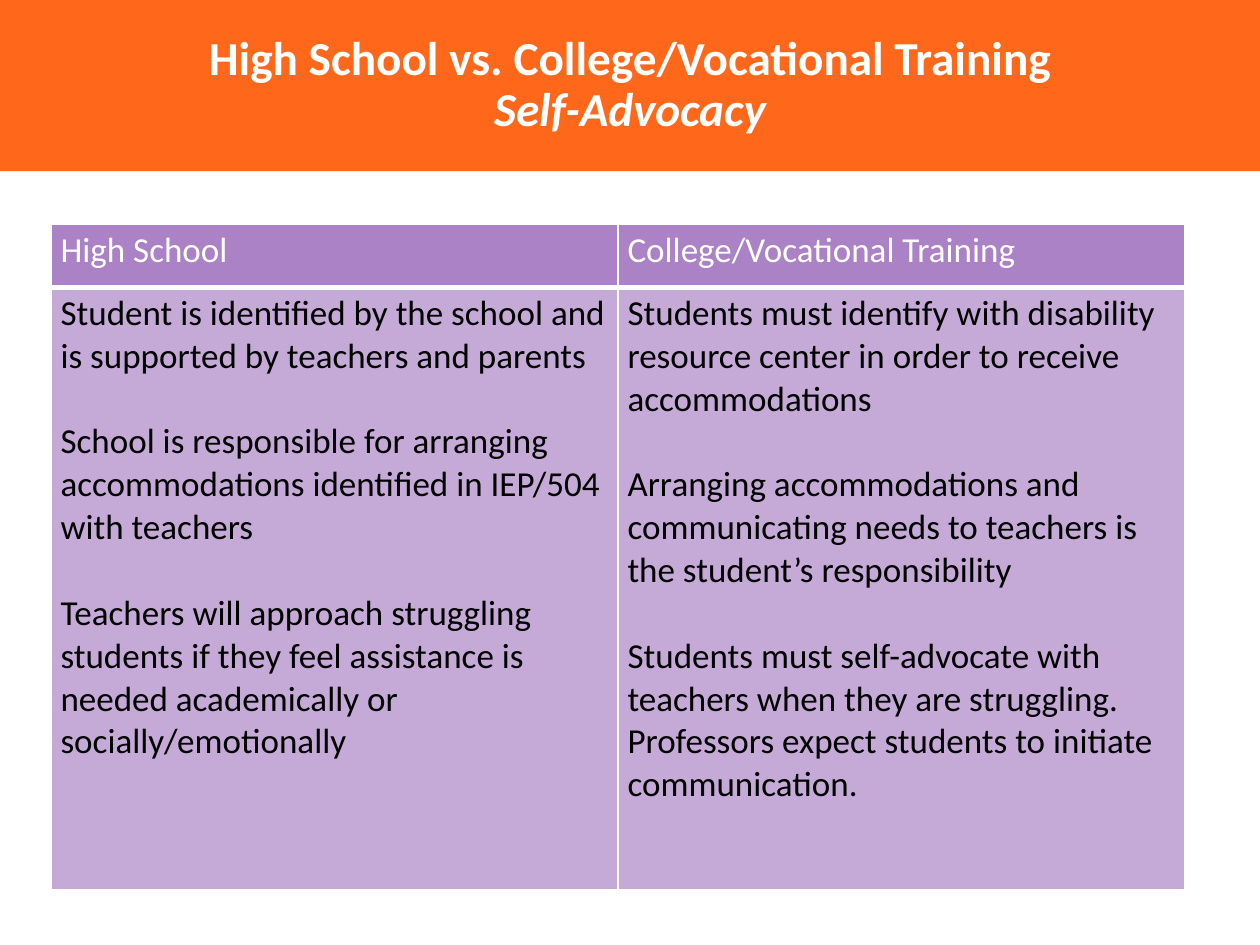
from pptx import Presentation
from pptx.dml.color import RGBColor
from pptx.enum.text import MSO_ANCHOR, MSO_AUTO_SIZE, PP_ALIGN
from pptx.oxml import parse_xml
from pptx.oxml.ns import nsdecls
from pptx.util import Cm, Pt

# Content
TOPIC = "High School vs. College/Vocational Training"
SUBTOPIC = "Self-Advocacy"
COMPARISON = {
    "High School": [
        "Student is identified by the school and is supported by teachers and parents",
        "School is responsible for arranging accommodations identified in IEP/504 with teachers",
        "Teachers will approach struggling students if they feel assistance is needed "
        "academically or socially/emotionally",
    ],
    "College/Vocational Training": [
        "Students must identify with disability resource center in order to receive accommodations",
        "Arranging accommodations and communicating needs to teachers is the student’s responsibility",
        "Students must self-advocate with teachers when they are struggling. "
        "Professors expect students to initiate communication.",
    ],
}

# Style
FONT = "Calibri"
ORANGE = RGBColor(0xFF, 0x67, 0x1B)
PURPLE = RGBColor(0xAB, 0x82, 0xC5)
LILAC = RGBColor(0xC5, 0xA9, 0xD7)
WHITE = RGBColor(0xFF, 0xFF, 0xFF)
BLACK = RGBColor(0, 0, 0)
POINT_GAP = Pt(24.4)  # one line of 20 pt text

# Layout
SLIDE_W, SLIDE_H = Cm(25.4), Cm(19.05)
BANNER_H = Cm(3.45)
TABLE_LEFT, TABLE_TOP, TABLE_W = Cm(1.03), Cm(4.52), Cm(22.86)
HEADING_H, POINTS_H = Cm(1.27), Cm(12.14)


def add_run(paragraph, text, size, color, bold=False, italic=False):
    run = paragraph.add_run()
    run.text = text
    font = run.font
    font.name, font.size, font.bold, font.italic = FONT, Pt(size), bold, italic
    font.color.rgb = color


def set_borders(cell, bottom_width):
    properties = cell._tc.get_or_add_tcPr()
    widths = {"lnL": 1, "lnR": 1, "lnT": 1, "lnB": bottom_width}
    for position, (side, width) in enumerate(widths.items()):
        properties.insert(position, parse_xml(
            f'<a:{side} {nsdecls("a")} w="{Pt(width)}"><a:solidFill>'
            f'<a:srgbClr val="{WHITE}"/></a:solidFill></a:{side}>'))


def fill_cell(cell, points, fill, color, bottom_width):
    cell.fill.solid()
    cell.fill.fore_color.rgb = fill
    set_borders(cell, bottom_width)
    cell.margin_left = cell.margin_right = Cm(0.19)
    cell.margin_top = cell.margin_bottom = Cm(0.1)
    frame = cell.text_frame
    for index, point in enumerate(points):
        paragraph = frame.add_paragraph() if index else frame.paragraphs[0]
        if index:
            paragraph.space_before = POINT_GAP
        add_run(paragraph, point, 20, color)


def main():
    prs = Presentation()
    prs.slide_width, prs.slide_height = SLIDE_W, SLIDE_H
    slide = prs.slides.add_slide(prs.slide_layouts[5])

    # Title banner
    banner = slide.shapes.title
    banner.left, banner.top, banner.width, banner.height = 0, 0, SLIDE_W, BANNER_H
    banner.fill.solid()
    banner.fill.fore_color.rgb = ORANGE
    banner.text_frame.auto_size = MSO_AUTO_SIZE.NONE
    banner.text_frame.vertical_anchor = MSO_ANCHOR.MIDDLE
    heading = banner.text_frame.paragraphs[0]
    heading.alignment = PP_ALIGN.CENTER
    heading.line_spacing = 0.9
    add_run(heading, TOPIC, 27, WHITE, bold=True)
    heading.add_line_break()
    add_run(heading, SUBTOPIC, 27, WHITE, bold=True, italic=True)

    # Comparison table
    table = slide.shapes.add_table(2, len(COMPARISON), TABLE_LEFT, TABLE_TOP,
                                   TABLE_W, HEADING_H + POINTS_H).table
    table.rows[0].height, table.rows[1].height = HEADING_H, POINTS_H
    for column, (setting, points) in enumerate(COMPARISON.items()):
        fill_cell(table.cell(0, column), [setting], PURPLE, WHITE, bottom_width=3)
        fill_cell(table.cell(1, column), points, LILAC, BLACK, bottom_width=1)

    prs.save("out.pptx")


if __name__ == "__main__":
    main()
